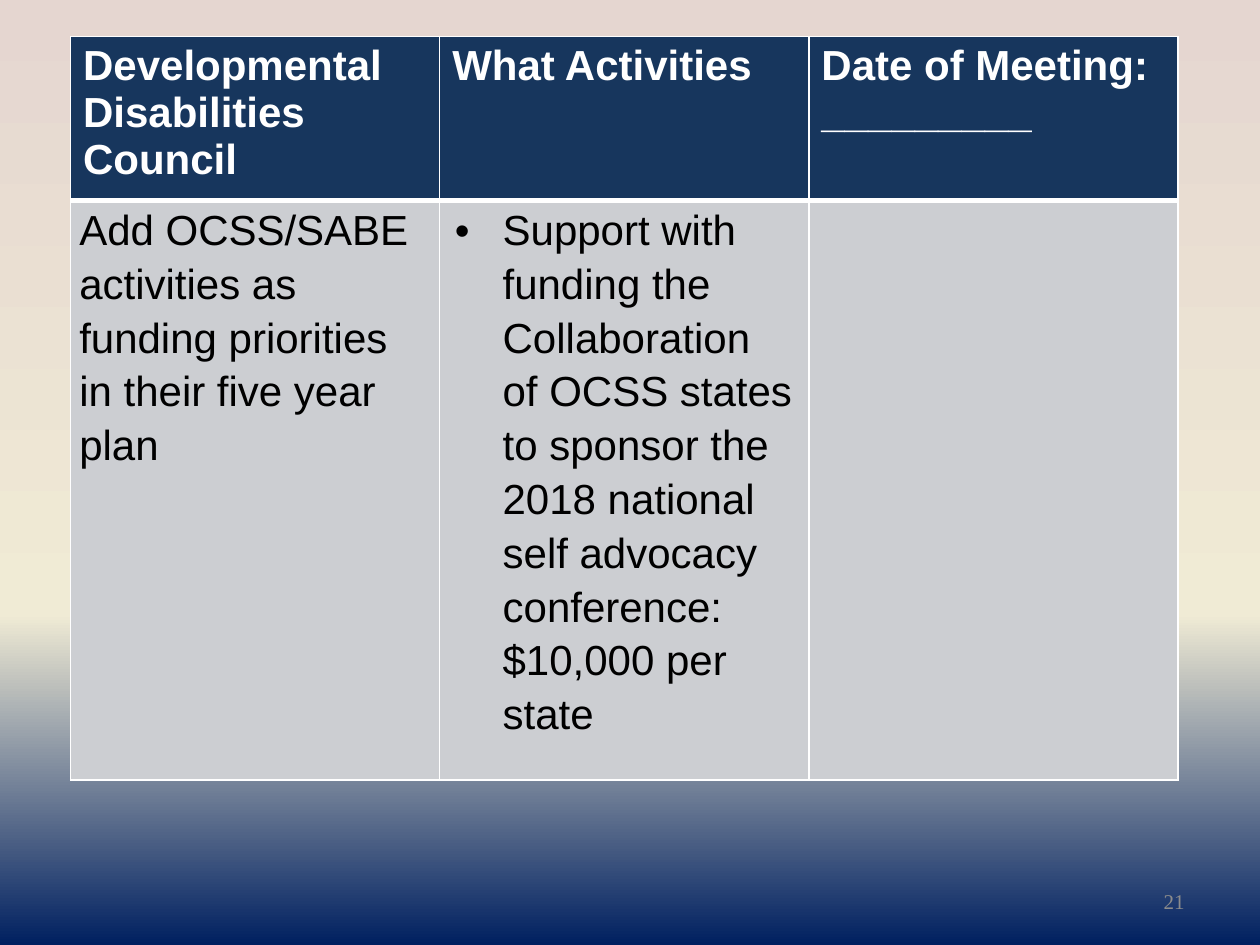
from copy import deepcopy

from lxml import etree
from pptx import Presentation
from pptx.dml.color import RGBColor
from pptx.enum.text import MSO_ANCHOR, PP_ALIGN
from pptx.oxml.ns import qn
from pptx.util import Inches, Pt

MIDDLE, RIGHT = MSO_ANCHOR.MIDDLE, PP_ALIGN.RIGHT

HEADS = [
    ["Developmental Disabilities Council"],
    ["What Activities"],
    ["Date of Meeting:", "_________"],
]
BODY = [
    ["Add OCSS/SABE activities as funding priorities in their five year plan"],
    ["Support with funding the Collaboration of OCSS states to sponsor the "
     "2018 national self advocacy conference: $10,000 per state"],
    [],
]
PAGE = "21"

THEME = {
    "font": "Arial", "size": 24,
    "page font": "Times New Roman", "page size": 12, "page ink": "8C8C8C",
    "head fill": "17365D", "head ink": "FFFFFF",
    "body fill": "CCCED2", "body ink": "000000",
    "rule": "FFFFFF", "thin": 1, "thick": 3,
    "sky": [(0, "E5D6D0"), (0.65, "F0EBD5"), (1, "002060")],
}
LEFT, TOP, COL = 0.56, 0.29, 2.93
ROWS = [1.28, 4.26]
INDENT = 0.38
BODY_PAD = [0.07, 0.12, 0.07]


def color(name):
    return RGBColor.from_string(THEME.get(name, name))


def paint_sky(slide):
    """Fill the background with a gradient that runs from top to bottom."""
    fill = slide.background.fill
    fill.gradient()
    fill.gradient_angle = 270
    stops = slide.element.find(".//" + qn("a:gsLst"))
    stops.append(deepcopy(stops[-1]))
    for stop, (place, tone) in zip(fill.gradient_stops, THEME["sky"]):
        stop.position = place
        stop.color.rgb = color(tone)


def add_run(para, text, font, size, ink, bold=False):
    run = para.add_run()
    run.text = text
    run.font.name, run.font.size = THEME[font], Pt(THEME[size])
    run.font.color.rgb, run.font.bold = color(ink), bold


def add_rules(cell, top, base):
    """Draw the four cell borders; they must precede the fill in the XML."""
    props = cell._tc.get_or_add_tcPr()
    sides = [("L", "thin"), ("R", "thin"), ("T", top), ("B", base)]
    for spot, (side, width) in enumerate(sides):
        line = etree.Element(qn("a:ln" + side), w=str(Pt(THEME[width])))
        fill = etree.SubElement(line, qn("a:solidFill"))
        etree.SubElement(fill, qn("a:srgbClr"), val=THEME["rule"])
        props.insert(spot, line)


def add_bullet(para):
    props = para._p.get_or_add_pPr()
    props.set("marL", str(Inches(INDENT)))
    props.set("indent", str(Inches(-INDENT)))
    etree.SubElement(props, qn("a:buFont"), typeface="Arial")
    etree.SubElement(props, qn("a:buChar"), char="•")


def fill_cell(cell, lines, part):
    cell.fill.solid()
    cell.fill.fore_color.rgb = color(part + " fill")
    frame = cell.text_frame
    for spot, text in enumerate(lines):
        para = frame.add_paragraph() if spot else frame.paragraphs[0]
        add_run(para, text, "font", "size", part + " ink", part == "head")


def add_grid(slide):
    frame = slide.shapes.add_table(
        len(ROWS), len(HEADS), Inches(LEFT), Inches(TOP),
        Inches(COL * len(HEADS)), Inches(sum(ROWS)))
    table = frame.table
    for col in table.columns:
        col.width = Inches(COL)
    for row, height in zip(table.rows, ROWS):
        row.height = Inches(height)
    for col, (head, body) in enumerate(zip(HEADS, BODY)):
        cell = table.cell(0, col)
        fill_cell(cell, head, "head")
        add_rules(cell, "thin", "thick")

        cell = table.cell(1, col)
        fill_cell(cell, body, "body")
        add_rules(cell, "thick", "thin")
        cell.margin_left = cell.margin_right = Inches(BODY_PAD[col])
        cell.margin_top = cell.margin_bottom = 0
        for para in cell.text_frame.paragraphs:
            para.line_spacing = 1.15
    item = table.cell(1, 1).text_frame.paragraphs[0]
    item.space_after = Pt(10)
    add_bullet(item)


def add_page(slide):
    box = slide.shapes.add_textbox(
        Inches(7.17), Inches(6.95), Inches(2.33), Inches(0.4))
    frame = box.text_frame
    frame.word_wrap = True
    frame.vertical_anchor = MIDDLE
    para = frame.paragraphs[0]
    para.alignment = RIGHT
    add_run(para, PAGE, "page font", "page size", "page ink")


def main():
    deck = Presentation()
    deck.slide_width, deck.slide_height = Inches(10), Inches(7.5)
    slide = deck.slides.add_slide(deck.slide_layouts[6])
    paint_sky(slide)
    add_page(slide)
    add_grid(slide)
    deck.save("out.pptx")


if __name__ == "__main__":
    main()
